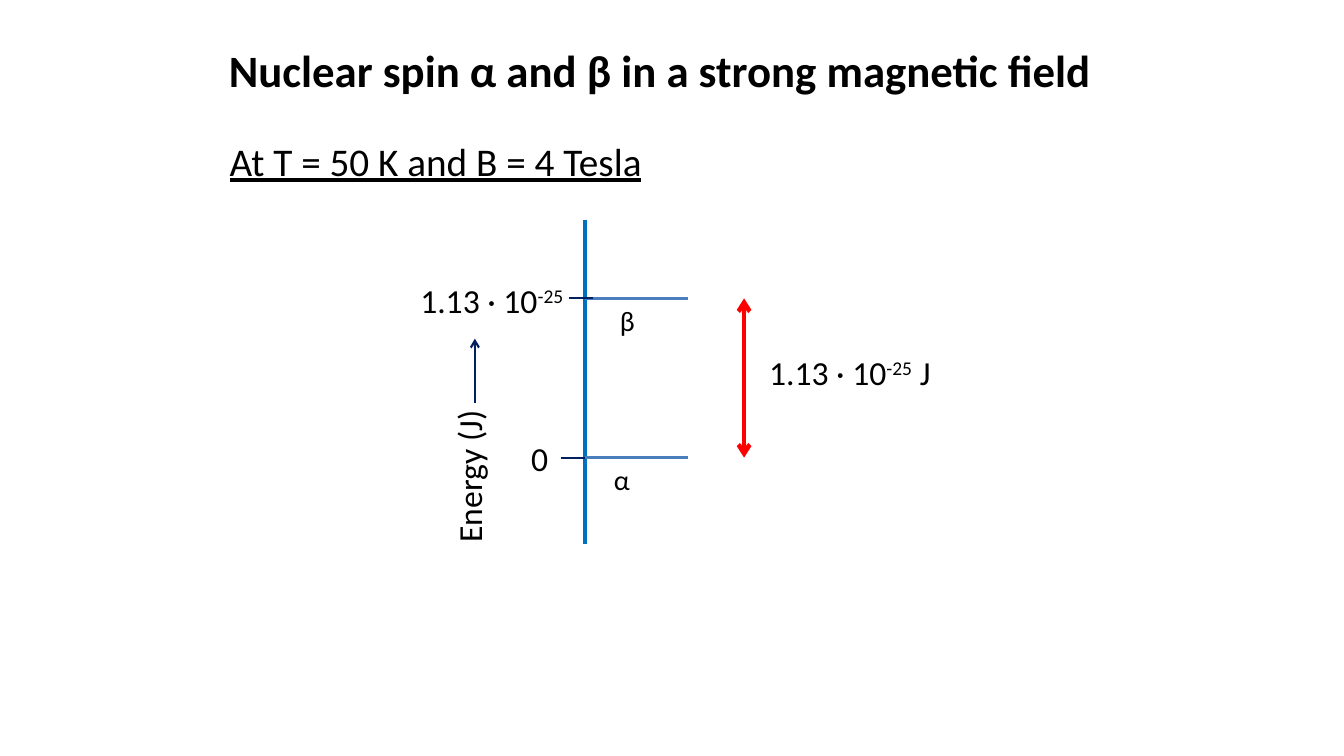
from lxml import etree
from pptx import Presentation
from pptx.dml.color import RGBColor
from pptx.enum import shapes, text
from pptx.oxml.ns import qn
from pptx.util import Inches, Pt

AXIS_X = 5.8
LEVEL_END = 6.82
BETA_Y, ALPHA_Y = 2.96, 4.54
NAVY, LEVEL_BLUE = "002060", "4B7EBC"


def write(shape, parts, size, wrap=True, **formats):
    """Fill a text shape; every second part is a superscript."""
    frame = shape.text_frame
    frame.word_wrap = wrap
    frame.auto_size = text.MSO_AUTO_SIZE.NONE
    paragraph = frame.paragraphs[0]
    paragraph.alignment = text.PP_ALIGN.LEFT
    for index, part in enumerate(parts):
        run = paragraph.add_run()
        run.text = part
        run.font.color.rgb = RGBColor.from_string("000000")
        for name, value in {"name": "Calibri", "size": Pt(size), **formats}.items():
            setattr(run.font, name, value)
        if index % 2:
            run._r.get_or_add_rPr().set("baseline", "30000")


def draw_line(parent, start, end, color, width, arrows=()):
    connector = parent.add_connector(
        shapes.MSO_CONNECTOR.STRAIGHT, *map(Inches, (*start, *end)))
    connector.line.color.rgb = RGBColor.from_string(color)
    connector.line.width = Pt(width)
    for arrow in arrows:
        etree.SubElement(connector.line._get_or_add_ln(), qn(f"a:{arrow}")).set("type", "arrow")
    etree.SubElement(connector._element.spPr, qn("a:effectLst"))


presentation = Presentation()
presentation.slide_width = Inches(13.33)
presentation.slide_height = Inches(7.5)
slide = presentation.slides.add_slide(presentation.slide_layouts[5])

# Title
title = slide.shapes.title
for name, value in dict(left=2.17, top=0.37, width=8.99, height=0.64).items():
    setattr(title, name, Inches(value))
title.text_frame.vertical_anchor = text.MSO_ANCHOR.MIDDLE
write(title, ["Nuclear spin α and β in a strong magnetic field"], 32, bold=True)

# Conditions
conditions = slide.shapes.add_textbox(*map(Inches, (2.18, 1.31, 4.69, 0.57)))
write(conditions, ["At T = 50 K and B = 4 Tesla"], 28, underline=True)

# Energy axis, spin levels and their ticks
draw_line(slide.shapes, (AXIS_X, 2.18), (AXIS_X, 5.4), "0070C0", 3)
for level_y, tick_start, tick_end in [(BETA_Y, 5.64, 5.88), (ALPHA_Y, 5.56, AXIS_X)]:
    draw_line(slide.shapes, (AXIS_X, level_y), (LEVEL_END, level_y), LEVEL_BLUE, 2.25)
    draw_line(slide.shapes, (tick_start, level_y), (tick_end, level_y), NAVY, 1.5)

# Energy gap
draw_line(slide.shapes, (7.38, BETA_Y), (7.38, ALPHA_Y), "FF0000", 3, ["headEnd", "tailEnd"])

# Level names and energies
labels = [
    (["β"], 6.05, BETA_Y, 0.5, 0.44, 20, True),
    (["α"], 5.99, ALPHA_Y, 0.5, 0.44, 20, True),
    (["0"], 5.17, 4.3, 0.39, 0.5, 24, True),
    (["1.13 · 10", "-25"], 4.07, 2.73, 1.67, 0.5, 24, False),
    (["1.13 · 10", "-25", " J"], 7.53, 3.44, 1.93, 0.5, 24, False),
]
for parts, left, top, width, height, size, wrap in labels:
    label = slide.shapes.add_textbox(*map(Inches, (left, top, width, height)))
    write(label, parts, size, wrap)

# Axis caption with its arrow
caption_group = slide.shapes.add_group_shape()
caption = caption_group.shapes.add_textbox(*map(Inches, (4.4, 3.95, 0.61, 1.53)))
write(caption, ["Energy (J)"], 24)
caption.text_frame._txBody.bodyPr.set("vert", "vert270")
draw_line(caption_group.shapes, (4.71, 4), (4.71, 3.36), NAVY, 1.5, ["tailEnd"])

presentation.save("out.pptx")
